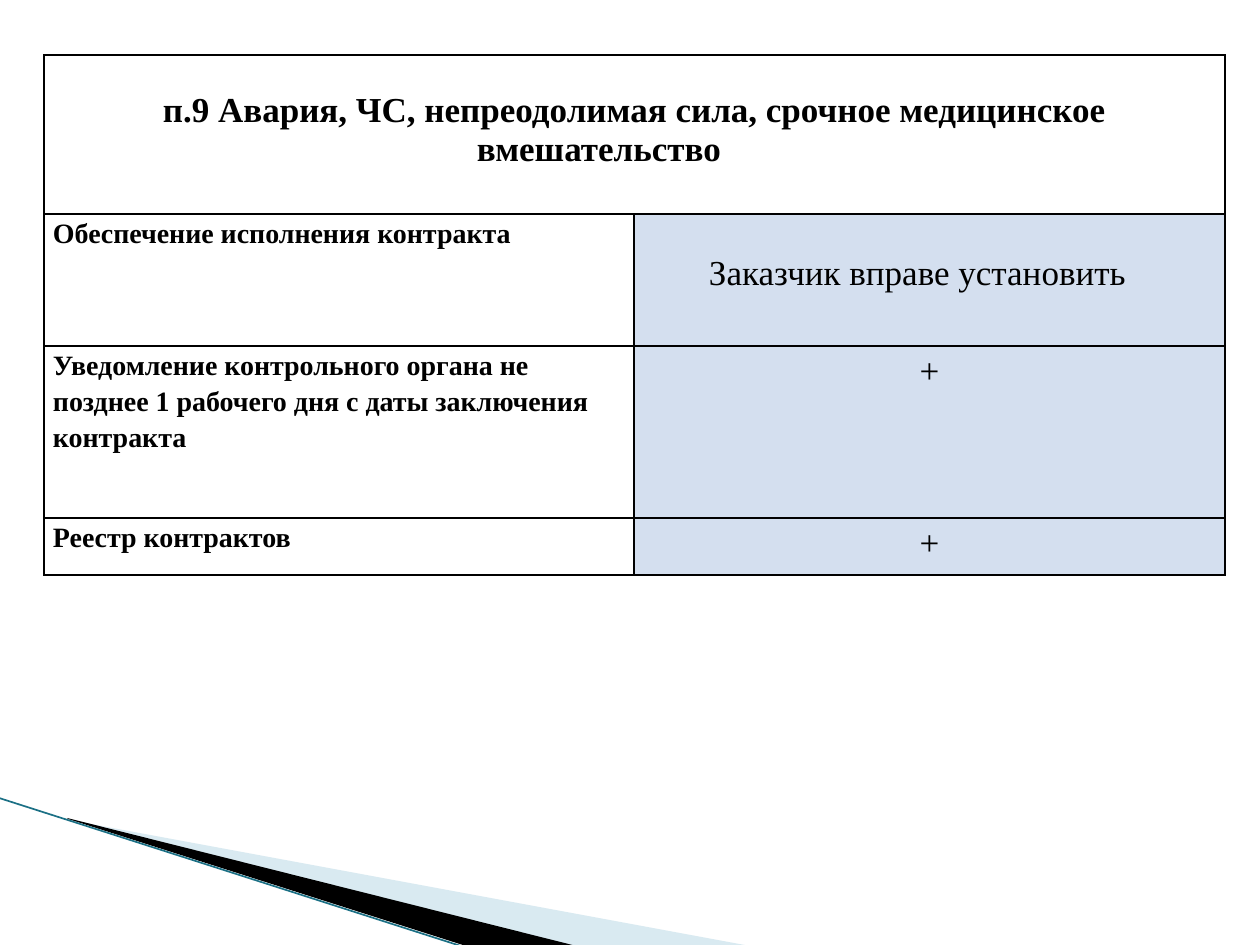
import pptx
import pptx.util
import pptx.dml.color
import pptx.enum.shapes
import pptx.enum.text
import pptx.oxml
import pptx.oxml.ns
from lxml import etree

RGBColor = pptx.dml.color.RGBColor
BLACK = RGBColor(0, 0, 0)
LIGHT_BLUE = RGBColor(0xD4, 0xDF, 0xEF)
PALE_TEAL = RGBColor(0xA0, 0xCB, 0xDC)
DARK_TEAL = RGBColor(0x1B, 0x70, 0x85)
FONT = "Times New Roman"
CENTER = pptx.enum.text.PP_ALIGN.CENTER
LEFT = pptx.enum.text.PP_ALIGN.LEFT

# Content: the trailing tabs shift the centred lines to the left
TITLE = "п.9 Авария, ЧС, непреодолимая сила, срочное медицинское вмешательство \t"
ROWS = [
    ("Обеспечение исполнения контракта", "Заказчик вправе установить\t"),
    ("Уведомление контрольного органа не позднее 1 рабочего дня "
     "с даты заключения контракта", "+"),
    ("Реестр контрактов", "+"),
]

# Layout in px
SLIDE_SIZE = (1260, 945)
TABLE_LEFT, TABLE_TOP = 44, 55
COLUMN_WIDTHS = (590, 591)
ROW_HEIGHTS = (159, 132, 172, 57)
SIDE_MARGIN = 9
TITLE_MARGIN, ANSWER_MARGIN = 36, 40

# Corner wedges: points, colour, opacity in percent
WEDGES = [
    ([(69, 820), (750, 946), (575, 946), (69, 819)], PALE_TEAL, 40),
    ([(67, 818), (576, 946), (469, 947), (68, 819)], BLACK, 100),
]
EDGE = (-1, 798, 467, 948)


def px(value):
    return pptx.util.Emu(round(value * 914400 / 126))


def add_wedge(slide, points, color, opacity):
    builder = slide.shapes.build_freeform(*points[0], scale=914400 / 126)
    builder.add_line_segments(points[1:], close=True)
    shape = builder.convert_to_shape()
    shape.shadow.inherit = False
    shape.line.fill.background()
    shape.fill.solid()
    shape.fill.fore_color.rgb = color
    if opacity < 100:
        fill_color = shape.fill._xPr.find(".//" + pptx.oxml.ns.qn("a:srgbClr"))
        etree.SubElement(fill_color, pptx.oxml.ns.qn("a:alpha"), val=str(opacity * 1000))


def add_borders(cell):
    properties = cell._tc.get_or_add_tcPr()
    for index, side in enumerate(("lnL", "lnR", "lnT", "lnB")):
        properties.insert(index, pptx.oxml.parse_xml(
            f'<a:{side} {pptx.oxml.ns.nsdecls("a")} w="12700"><a:solidFill>'
            f'<a:srgbClr val="{BLACK}"/></a:solidFill></a:{side}>'))


def write_cell(cell, text, size=16, bold=True, align=LEFT, spacing=1.0, top=0):
    cell.margin_left = cell.margin_right = px(SIDE_MARGIN)
    cell.margin_top, cell.margin_bottom = px(top), 0
    paragraph = cell.text_frame.paragraphs[0]
    paragraph.alignment = align
    paragraph.line_spacing = spacing
    run = paragraph.add_run()
    run.text = text
    run.font.name = FONT
    run.font.size = pptx.util.Pt(size)
    run.font.bold = bold
    run.font.color.rgb = BLACK


def add_table(slide):
    table = slide.shapes.add_table(
        len(ROW_HEIGHTS), len(COLUMN_WIDTHS), px(TABLE_LEFT), px(TABLE_TOP),
        px(sum(COLUMN_WIDTHS)), px(sum(ROW_HEIGHTS))).table
    table.first_row = table.horz_banding = False
    for column, width in zip(table.columns, COLUMN_WIDTHS):
        column.width = px(width)
    for row, height in zip(table.rows, ROW_HEIGHTS):
        row.height = px(height)
    for cell in table.iter_cells():
        cell.fill.background()
        add_borders(cell)

    # Title across both columns
    table.cell(0, 0).merge(table.cell(0, 1))
    write_cell(table.cell(0, 0), TITLE, size=20, align=CENTER, top=TITLE_MARGIN)

    # Requirement and answer
    for index, (requirement, answer) in enumerate(ROWS, start=1):
        write_cell(table.cell(index, 0), requirement, spacing=1.15)
        answer_cell = table.cell(index, 1)
        answer_cell.fill.solid()
        answer_cell.fill.fore_color.rgb = LIGHT_BLUE
        is_mark = answer == "+"
        write_cell(answer_cell, answer, size=20, bold=False, align=CENTER,
                   spacing=1.15 if is_mark else 1.0,
                   top=0 if is_mark else ANSWER_MARGIN)


def main():
    presentation = pptx.Presentation()
    presentation.slide_width, presentation.slide_height = map(px, SLIDE_SIZE)
    slide = presentation.slides.add_slide(presentation.slide_layouts[6])

    # Corner decoration
    for points, color, opacity in WEDGES:
        add_wedge(slide, points, color, opacity)
    edge = slide.shapes.add_connector(
        pptx.enum.shapes.MSO_CONNECTOR.STRAIGHT, *map(px, EDGE))
    edge.line.color.rgb = DARK_TEAL
    edge.line.width = pptx.util.Pt(0.95)
    etree.SubElement(edge._element.spPr, pptx.oxml.ns.qn("a:effectLst"))

    add_table(slide)
    presentation.save("out.pptx")


if __name__ == "__main__":
    main()
